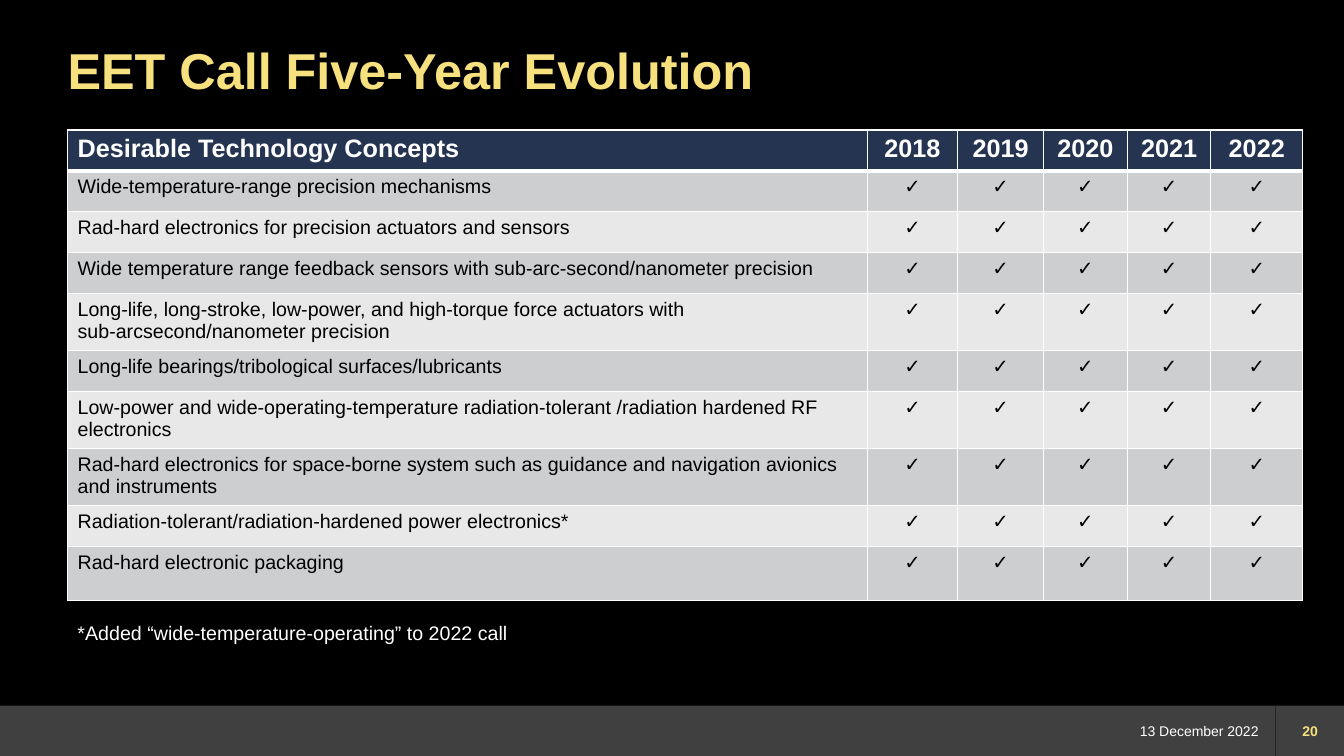
from lxml.etree import SubElement
from pptx import Presentation
from pptx.dml.color import RGBColor
from pptx.enum.shapes import MSO_CONNECTOR as CONN, MSO_SHAPE as SHAPE
from pptx.enum.text import MSO_ANCHOR as ANCHOR, PP_ALIGN as ALIGN
from pptx.oxml.ns import qn
from pptx.util import Inches, Pt

WIDTH, HEIGHT = 13.33, 7.5
LEFT = 0.67
FONT = "Arial"
BLACK = RGBColor(0x00, 0x00, 0x00)
WHITE = RGBColor(0xFF, 0xFF, 0xFF)
YELLOW = RGBColor(0xF7, 0xE1, 0x7F)
NAVY = RGBColor(0x24, 0x34, 0x51)
FOOTER = RGBColor(0x40, 0x40, 0x40)
DIVIDER = RGBColor(0x26, 0x26, 0x26)
BANDS = [RGBColor(0xCD, 0xCE, 0xD0), RGBColor(0xE8, 0xE8, 0xE9)]

COLUMNS = [7.93, 0.9, 0.85, 0.83, 0.83, 0.91]
TALL_ROW = 0.54
SHORT_ROW = TALL_ROW * 3 / 4
TALL_ROWS = {4, 6, 7, 9}
HEADER = ["Desirable Technology Concepts", "2018", "2019", "2020", "2021", "2022"]
CONCEPTS = [
    "Wide-temperature-range precision mechanisms",
    "Rad-hard electronics for precision actuators and sensors",
    "Wide temperature range feedback sensors with sub-arc-second/nanometer precision",
    "Long-life, long-stroke, low-power, and high-torque force actuators with "
    "sub‑arcsecond/nanometer precision",
    "Long-life bearings/tribological surfaces/lubricants",
    "Low-power and wide-operating-temperature radiation-tolerant /radiation hardened RF "
    "electronics",
    "Rad-hard electronics for space-borne system such as guidance and navigation avionics "
    "and instruments",
    "Radiation-tolerant/radiation-hardened power electronics*",
    "Rad-hard electronic packaging",
]


def write(tf, text, size, color, bold=False, align=ALIGN.LEFT):
    p = tf.paragraphs[0]
    p.alignment = align
    r = p.add_run()
    r.text = text
    r.font.name, r.font.size, r.font.bold = FONT, Pt(size), bold
    r.font.color.rgb = color
    return p


def add_text(s, box, text, size, color, bold=False, align=ALIGN.LEFT,
             anchor=ANCHOR.TOP, inset=(0.1, 0.05)):
    tf = s.shapes.add_textbox(*map(Inches, box)).text_frame
    tf.word_wrap = True
    tf.vertical_anchor = anchor
    tf.margin_left = tf.margin_right = Inches(inset[0])
    tf.margin_top = tf.margin_bottom = Inches(inset[1])
    return write(tf, text, size, color, bold, align)


def set_borders(cell, header):
    tcPr = cell._tc.get_or_add_tcPr()
    for i, side in enumerate(("lnL", "lnR", "lnT", "lnB")):
        width = 3 if header and side == "lnB" else 1
        ln = SubElement(tcPr, qn(f"a:{side}"), w=str(Pt(width)))
        fill = SubElement(ln, qn("a:solidFill"))
        SubElement(fill, qn("a:srgbClr"), val=str(WHITE))
        tcPr.insert(i, ln)  # borders come before the cell fill


def add_concept_table(s, left, top):
    rows = [HEADER] + [[concept] + ["✓"] * 5 for concept in CONCEPTS]
    heights = [TALL_ROW if i in TALL_ROWS else SHORT_ROW for i in range(len(rows))]
    box = left, top, sum(COLUMNS), sum(heights)
    table = s.shapes.add_table(len(rows), len(COLUMNS), *map(Inches, box)).table
    for column, width in zip(table.columns, COLUMNS):
        column.width = Inches(width)
    for i, (values, height) in enumerate(zip(rows, heights)):
        table.rows[i].height = Inches(height)
        header = i == 0
        for j, value in enumerate(values):
            cell = table.cell(i, j)
            cell.fill.solid()
            cell.fill.fore_color.rgb = NAVY if header else BANDS[(i - 1) % 2]
            set_borders(cell, header)
            write(cell.text_frame, value, 18 if header else 14,
                  WHITE if header else BLACK, header,
                  ALIGN.CENTER if j else ALIGN.LEFT)


def add_footer(s, top, height):
    bar = s.shapes.add_shape(SHAPE.RECTANGLE, 0, Inches(top), Inches(WIDTH), Inches(height))
    bar.shadow.inherit = False
    bar.fill.solid()
    bar.fill.fore_color.rgb = FOOTER
    bar.line.fill.background()

    x = Inches(WIDTH - 0.68)
    line = s.shapes.add_connector(CONN.STRAIGHT, x, Inches(top), x, Inches(top + height))
    line.line.color.rgb = DIVIDER
    line.line.width = Pt(1)
    SubElement(line._element.spPr, qn("a:effectLst"))

    add_text(s, (WIDTH - 2.25, top, 1.5, height), "13 December 2022", 10, WHITE,
             align=ALIGN.RIGHT, anchor=ANCHOR.MIDDLE, inset=(0.1, 0))
    add_text(s, (WIDTH - 0.6, top, 0.53, height), "20", 10, YELLOW, bold=True,
             align=ALIGN.CENTER, anchor=ANCHOR.MIDDLE, inset=(0, 0))


def main():
    prs = Presentation()
    prs.slide_width, prs.slide_height = Inches(WIDTH), Inches(HEIGHT)
    s = prs.slides.add_slide(prs.slide_layouts[6])
    s.background.fill.solid()
    s.background.fill.fore_color.rgb = BLACK

    # Footer bar, date and page number
    add_footer(s, HEIGHT - 0.5, 0.5)

    # Title
    title = add_text(s, (LEFT, 0.46, 12, 0.83), "EET Call Five-Year Evolution",
                     36, YELLOW, bold=True, inset=(0, 0))
    title.line_spacing = 0.9

    # Concepts by year, with the footnote
    add_concept_table(s, LEFT, 1.29)
    add_text(s, (LEFT, 6.11, 12.06, 0.34),
             "*Added “wide-temperature-operating” to 2022 call", 14, WHITE)

    prs.save("out.pptx")


if __name__ == "__main__":
    main()
